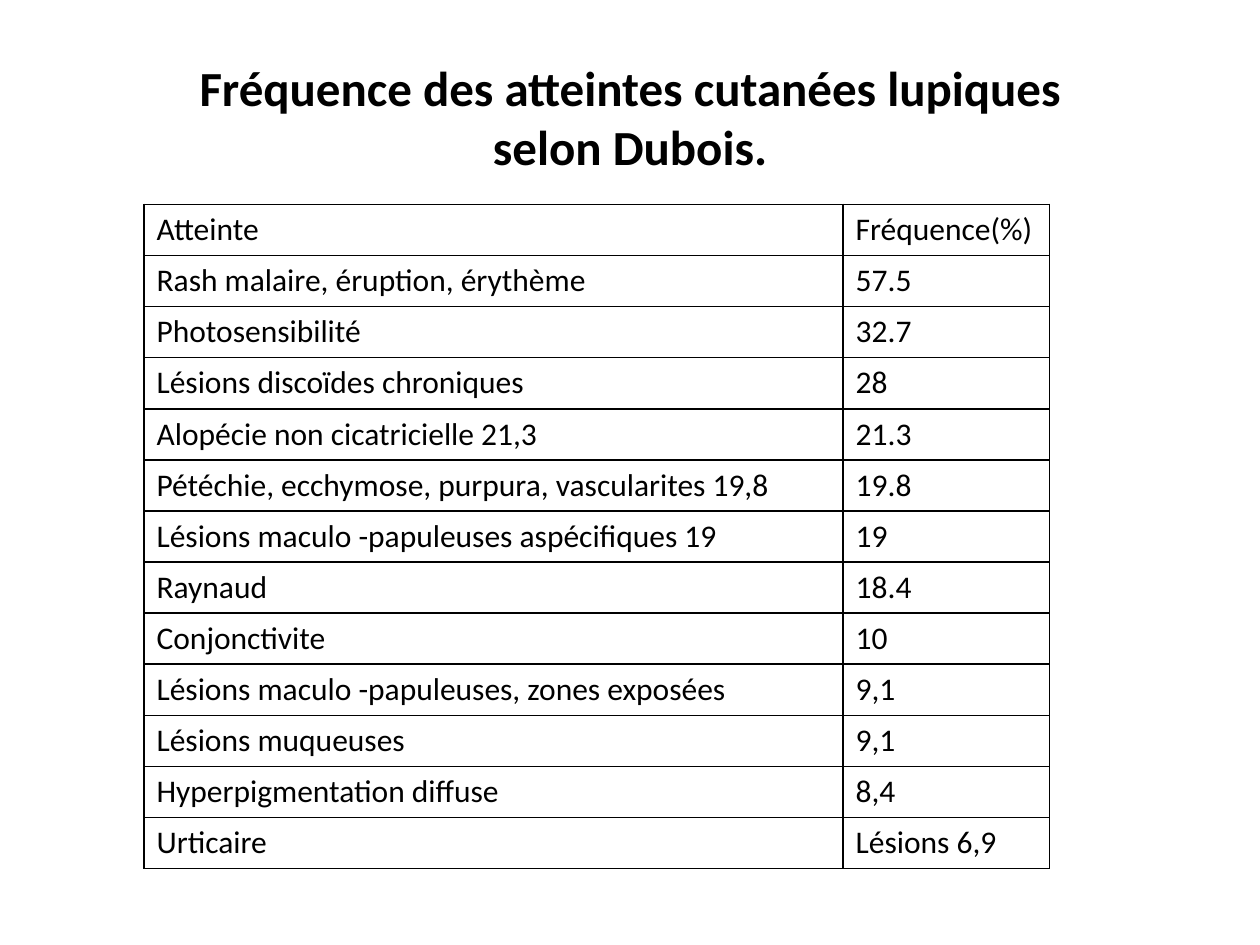
from lxml.etree import SubElement
from pptx import Presentation
from pptx.dml.color import RGBColor
from pptx.enum.text import MSO_ANCHOR, PP_ALIGN
from pptx.oxml.ns import qn
from pptx.util import Pt

BLACK = "000000"


def color(value):
    return RGBColor.from_string(value)


def add_span(para, text, size, bold=False):
    span = para.add_run()
    span.text = text
    span.font.name = "Calibri"
    span.font.size = Pt(size)
    span.font.bold = bold
    span.font.color.rgb = color(BLACK)


deck = Presentation()
deck.slide_width, deck.slide_height = Pt(720), Pt(540)
page = deck.slides.add_slide(deck.slide_layouts[6])

# Title
box = page.shapes.add_textbox(Pt(36), Pt(21.6), Pt(648), Pt(90))
box.text_frame.word_wrap = True
box.text_frame.vertical_anchor = MSO_ANCHOR.MIDDLE
para = box.text_frame.paragraphs[0]
para.alignment = PP_ALIGN.CENTER
add_span(para, "Fréquence des atteintes cutanées lupiques", 28, bold=True)
para.add_line_break()
add_span(para, "selon Dubois.", 28, bold=True)

# Frequency table
rows = [
    ("Atteinte", "Fréquence(%)"),
    ("Rash malaire, éruption, érythème", "57.5"),
    ("Photosensibilité", "32.7"),
    ("Lésions discoïdes chroniques", "28"),
    ("Alopécie non cicatricielle 21,3", "21.3"),
    ("Pétéchie, ecchymose, purpura, vascularites 19,8", "19.8"),
    ("Lésions maculo -papuleuses aspécifiques 19", "19"),
    ("Raynaud", "18.4"),
    ("Conjonctivite", "10"),
    ("Lésions maculo -papuleuses, zones exposées", "9,1"),
    ("Lésions muqueuses", "9,1"),
    ("Hyperpigmentation diffuse", "8,4"),
    ("Urticaire", "Lésions 6,9"),
]
widths = [399.5, 118]
row_height = 29.2
table = page.shapes.add_table(
    len(rows), len(widths), Pt(82.3), Pt(116.8),
    Pt(sum(widths)), Pt(row_height * len(rows))).table
for column, width in zip(table.columns, widths):
    column.width = Pt(width)

for row_index, values in enumerate(rows):
    table.rows[row_index].height = Pt(row_height)
    for column_index, text in enumerate(values):
        cell = table.cell(row_index, column_index)
        add_span(cell.text_frame.paragraphs[0], text, 18)

        # Borders come before the fill in the cell properties
        properties = cell._tc.get_or_add_tcPr()
        for side in ("a:lnL", "a:lnR", "a:lnT", "a:lnB"):
            line = SubElement(properties, qn(side), w=str(Pt(1)))
            fill = SubElement(line, qn("a:solidFill"))
            SubElement(fill, qn("a:srgbClr"), val=BLACK)
        cell.fill.background()

deck.save("out.pptx")
